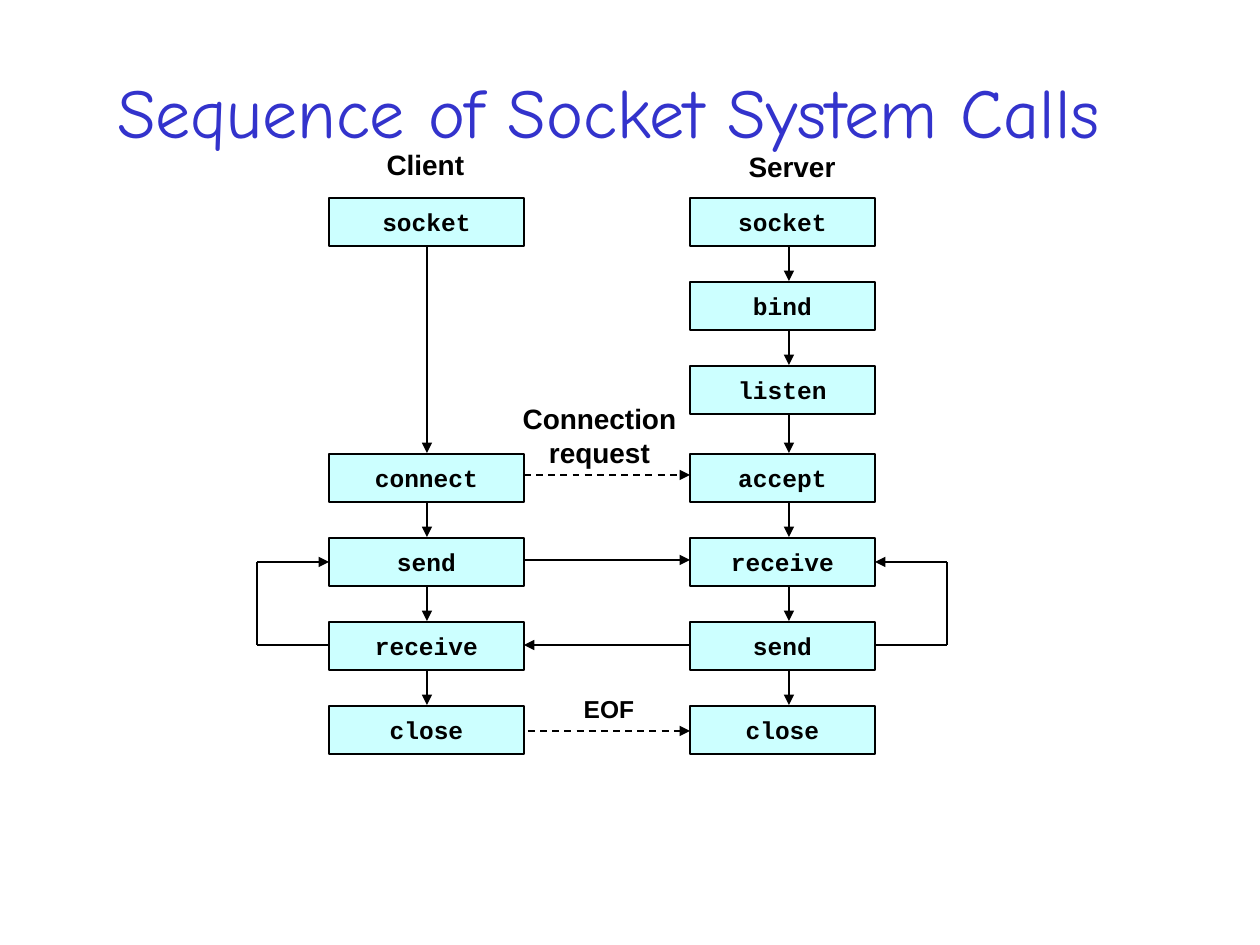
import pptx
import pptx.util
import pptx.dml.color
import pptx.enum.dml
import pptx.enum.shapes
import pptx.enum.text
import pptx.oxml.ns
import lxml.etree

PIXEL = 914400 // 126
BLACK = "000000"

deck = pptx.Presentation()
deck.slide_width = pptx.util.Inches(10)
deck.slide_height = pptx.util.Inches(7.5)
slide = deck.slides.add_slide(deck.slide_layouts[6])
qn = pptx.oxml.ns.qn


def write(holder, wording, font, size, color=BLACK, bold=True):
    frame = holder.text_frame
    frame.word_wrap = False
    frame.vertical_anchor = pptx.enum.text.MSO_ANCHOR.MIDDLE
    frame.text = wording
    looks = {"name": font, "size": pptx.util.Pt(size), "bold": bold}
    for paragraph in frame.paragraphs:
        paragraph.alignment = pptx.enum.text.PP_ALIGN.CENTER
        for run in paragraph.runs:
            for key, value in looks.items():
                setattr(run.font, key, value)
            run.font.color.rgb = pptx.dml.color.RGBColor.from_string(color)


def connect(ends, width=1, arrow=True, dashed=False):
    link = slide.shapes.add_connector(
        pptx.enum.shapes.MSO_CONNECTOR.STRAIGHT, *[end * PIXEL for end in ends])
    link.line.width = pptx.util.Pt(width)
    link.line.color.rgb = pptx.dml.color.RGBColor.from_string(BLACK)
    if dashed:
        link.line.dash_style = pptx.enum.dml.MSO_LINE.DASH
    if arrow:
        lxml.etree.SubElement(link.line._get_or_add_ln(), qn("a:tailEnd"), type="triangle")
    lxml.etree.SubElement(link._element.spPr, qn("a:effectLst"))


row_tops = [198 + 84 * row + (4 if row > 2 else 0) for row in range(7)]
box_height = 48
client_left, client_width, client_axis = 329, 195, 427
server_left, server_width, server_axis = 690, 185, 789
client_right = client_left + client_width
server_right = server_left + server_width

client_calls = {0: "socket", 3: "connect", 4: "send", 5: "receive", 6: "close"}
server_calls = dict(enumerate(
    ["socket", "bind", "listen", "accept", "receive", "send", "close"]))

for left, width, axis, calls in [
    (client_left, client_width, client_axis, client_calls),
    (server_left, server_width, server_axis, server_calls),
]:
    previous = None
    for row, call in calls.items():
        top = row_tops[row]
        box = slide.shapes.add_shape(
            pptx.enum.shapes.MSO_SHAPE.RECTANGLE,
            *[length * PIXEL for length in (left, top, width, box_height)])
        box.shadow.inherit = False
        box.fill.solid()
        box.fill.fore_color.rgb = pptx.dml.color.RGBColor.from_string("CCFFFF")
        box.line.color.rgb = pptx.dml.color.RGBColor.from_string(BLACK)
        box.line.width = pptx.util.Pt(1)
        write(box, call, "Courier New", 14)
        if previous is not None:
            connect((axis, row_tops[previous] + box_height, axis, top - 1))
        previous = row

for ends, dashed in [
    ((client_right, 475, server_left, 475), True),
    ((client_right, 560, server_left, 560), False),
    ((server_left, 645, client_right, 645), False),
    ((client_right + 4, 731, server_left, 731), True),
]:
    connect(ends, dashed=dashed)

for loop_x, box_edge in [(257, client_left), (947, server_right)]:
    connect((box_edge, 645, loop_x, 645), 0.75, arrow=False)
    connect((loop_x, 645, loop_x, 562), 0.75, arrow=False)
    connect((loop_x, 562, box_edge, 562), 0.75)

for wording, place, font, size, color, bold in [
    ("Sequence of Socket System Calls", (73, 32, 1071, 157), "Comic Neue", 40, "3333CC", False),
    ("Client", (374, 141, 103, 47), "Arial", 16, BLACK, True),
    ("Server", (736, 143, 112, 47), "Arial", 16, BLACK, True),
    ("Connection\nrequest", (510, 395, 179, 81), "Arial", 16, BLACK, True),
    ("EOF", (571, 688, 76, 42), "Arial", 14, BLACK, True),
]:
    label = slide.shapes.add_textbox(*[length * PIXEL for length in place])
    write(label, wording, font, size, color, bold)

deck.save("out.pptx")
